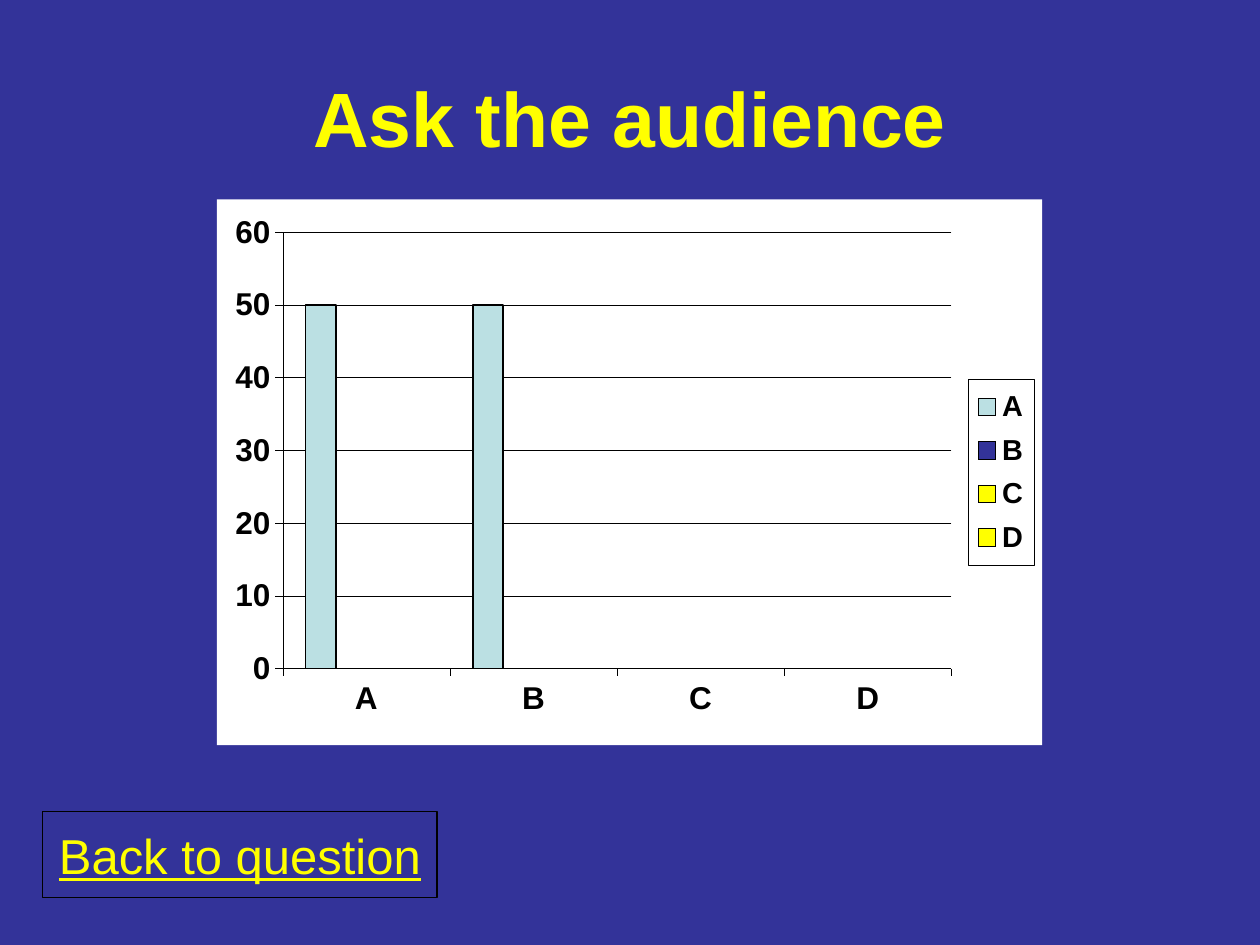
import pptx
import pptx.chart.data
import pptx.dml.color
import pptx.enum.chart
import pptx.enum.shapes
import pptx.enum.text
import pptx.oxml
import pptx.oxml.ns
import pptx.util
from dataclasses import dataclass
from pptx.util import Cm


@dataclass(frozen=True)
class Theme:
    font: str = "Arial"
    background: str = "333399"
    accent: str = "FFFF00"
    ink: str = "000000"
    paper: str = "FFFFFF"
    bars: tuple = ("BBE0E3", "333399", "FFFF00", "FFFF00")
    title_size: float = 44
    button_size: float = 28
    axis_size: float = 18
    legend_size: float = 16.5


theme = Theme()
rgb = pptx.dml.color.RGBColor.from_string
qn = pptx.oxml.ns.qn


def style_font(font, size, color, bold=False):
    font.name, font.size, font.bold = theme.font, pptx.util.Pt(size), bold
    font.color.rgb = rgb(color)


def place(element, index, x, y, w, h, target=""):
    """Give a chart part a fixed place, in fractions of the chart."""
    for old in element.findall(qn("c:layout")):
        element.remove(old)
    element.insert(index, pptx.oxml.parse_xml(
        f'<c:layout {pptx.oxml.ns.nsdecls("c")}><c:manualLayout>{target}'
        '<c:xMode val="edge"/><c:yMode val="edge"/>'
        f'<c:x val="{x}"/><c:y val="{y}"/><c:w val="{w}"/><c:h val="{h}"/>'
        '</c:manualLayout></c:layout>'))


# Slide
deck = pptx.Presentation()
deck.slide_width, deck.slide_height = Cm(25.4), Cm(19.05)
slide = deck.slides.add_slide(deck.slide_layouts[6])
slide.background.fill.solid()
slide.background.fill.fore_color.rgb = rgb(theme.background)

# Title
title = slide.shapes.add_textbox(Cm(1.27), Cm(0.76), Cm(22.86), Cm(3.18)).text_frame
title.word_wrap = True
title.vertical_anchor = pptx.enum.text.MSO_ANCHOR.MIDDLE
heading = title.paragraphs[0]
heading.text = "Ask the audience"
heading.alignment = pptx.enum.text.PP_ALIGN.CENTER
style_font(heading.font, theme.title_size, theme.accent, bold=True)

# Audience votes
answers = "ABCD"
votes = pptx.chart.data.CategoryChartData()
votes.categories = answers
for answer in answers:
    votes.add_series(answer, (50, 50, 0, 0) if answer == "A" else (0, 0, 0, 0))
poll = slide.shapes.add_chart(
    pptx.enum.chart.XL_CHART_TYPE.COLUMN_CLUSTERED,
    Cm(4.37), Cm(4.02), Cm(16.64), Cm(11), votes).chart
poll.has_title = False
style_font(poll.font, theme.axis_size, theme.ink, bold=True)

# Bars
columns = poll.plots[0]
columns.gap_width, columns.overlap = 150, 0
columns.vary_by_categories = False
for series, color in zip(columns.series, theme.bars):
    series.format.fill.solid()
    series.format.fill.fore_color.rgb = rgb(color)
    series.format.line.color.rgb = rgb(theme.ink)
    series.format.line.width = pptx.util.Pt(1)

# Axes and gridlines
poll.value_axis.has_major_gridlines = True
poll.value_axis.minimum_scale, poll.value_axis.maximum_scale = 0, 60
poll.value_axis.major_unit = 10
poll.category_axis.tick_label_position = pptx.enum.chart.XL_TICK_LABEL_POSITION.LOW
for axis in (poll.category_axis, poll.value_axis):
    axis.major_tick_mark = pptx.enum.chart.XL_TICK_MARK.OUTSIDE
    axis.minor_tick_mark = pptx.enum.chart.XL_TICK_MARK.NONE
    style_font(axis.tick_labels.font, theme.axis_size, theme.ink, bold=True)
for ruled in (poll.category_axis, poll.value_axis, poll.value_axis.major_gridlines):
    ruled.format.line.color.rgb = rgb(theme.ink)
    ruled.format.line.width = pptx.util.Pt(0.25)

# Legend
poll.has_legend = True
legend = poll.legend
legend.position = pptx.enum.chart.XL_LEGEND_POSITION.RIGHT
legend.include_in_layout = False
style_font(legend.font, theme.legend_size, theme.ink, bold=True)

# Places and frames inside the chart
chart_space = poll.element
plot_area = chart_space.find(qn("c:chart")).find(qn("c:plotArea"))
legend_box = chart_space.find(qn("c:chart")).find(qn("c:legend"))
place(plot_area, 0, 0.08, 0.06, 0.81, 0.8, '<c:layoutTarget val="inner"/>')
place(legend_box, 1, 0.91, 0.33, 0.08, 0.34)
for frame, outline in (
        (chart_space, "<a:ln><a:noFill/></a:ln>"),
        (legend_box, f'<a:ln w="3175"><a:solidFill><a:srgbClr val="{theme.ink}"/>'
                     '</a:solidFill></a:ln>')):
    frame.find(qn("c:txPr")).addprevious(pptx.oxml.parse_xml(
        f'<c:spPr {pptx.oxml.ns.nsdecls("c", "a")}><a:solidFill>'
        f'<a:srgbClr val="{theme.paper}"/></a:solidFill>{outline}</c:spPr>'))

# Button back to the question
button = slide.shapes.add_shape(
    pptx.enum.shapes.MSO_SHAPE.RECTANGLE, Cm(0.86), Cm(16.36), Cm(7.95), Cm(1.73))
button.shadow.inherit = False
button.fill.background()
button.line.color.rgb = rgb(theme.ink)
button.line.width = pptx.util.Pt(0.75)
button.text_frame.word_wrap = False
button.text_frame.vertical_anchor = pptx.enum.text.MSO_ANCHOR.MIDDLE
back = button.text_frame.paragraphs[0]
back.text = "Back to question"
back.alignment = pptx.enum.text.PP_ALIGN.CENTER
style_font(back.font, theme.button_size, theme.accent)
back.font.underline = True

deck.save("out.pptx")
